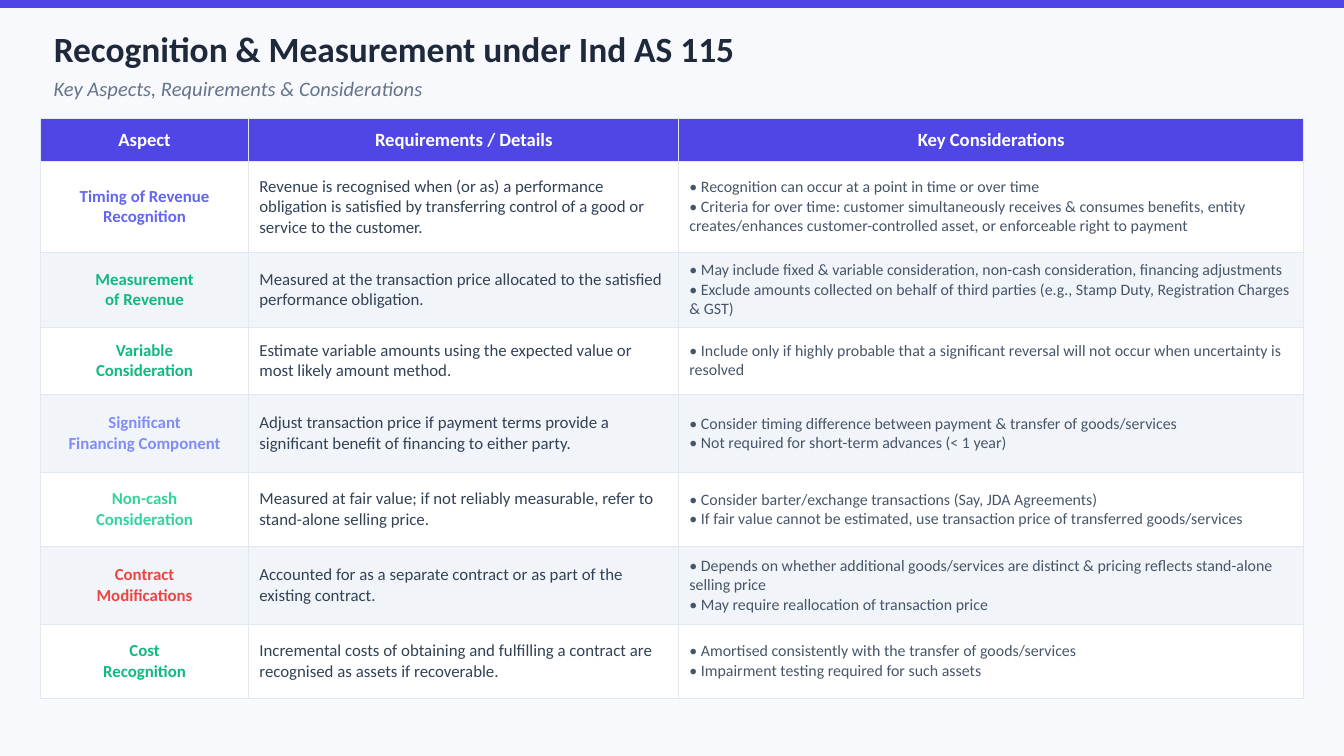
from dataclasses import dataclass

from lxml import etree
from pptx import Presentation
from pptx.dml.color import RGBColor
from pptx.enum.shapes import MSO_SHAPE
from pptx.enum.text import MSO_ANCHOR, MSO_AUTO_SIZE, PP_ALIGN
from pptx.oxml.ns import qn
from pptx.util import Inches, Pt

RECTANGLE = MSO_SHAPE.RECTANGLE
MIDDLE = MSO_ANCHOR.MIDDLE
NO_FIT = MSO_AUTO_SIZE.NONE
LEFT, CENTER = PP_ALIGN.LEFT, PP_ALIGN.CENTER

FONT = "Calibri"
INDIGO = RGBColor(0x4F, 0x46, 0xE5)
VIOLET = RGBColor(0x63, 0x66, 0xF1)
LAVENDER = RGBColor(0x81, 0x8C, 0xF8)
GREEN = RGBColor(0x10, 0xB9, 0x81)
MINT = RGBColor(0x34, 0xD3, 0x99)
RED = RGBColor(0xEF, 0x44, 0x44)
INK = RGBColor(0x1E, 0x29, 0x3B)
BODY = RGBColor(0x33, 0x41, 0x55)
DETAIL = RGBColor(0x47, 0x55, 0x69)
MUTED = RGBColor(0x64, 0x74, 0x8B)
BORDER = RGBColor(0xE2, 0xE8, 0xF0)
PALE = RGBColor(0xF1, 0xF5, 0xF9)
PAGE = RGBColor(0xF8, 0xF9, 0xFC)
WHITE = RGBColor(0xFF, 0xFF, 0xFF)

# The slide is a 16:9 grid, 1000 units wide
UNIT = Inches(0.01)
SLIDE_WIDTH = 1000 * UNIT
SLIDE_HEIGHT = SLIDE_WIDTH * 9 // 16
COLUMNS = (155, 320, 465)
HEADER_HEIGHT = 32
PADDING_X, PADDING_Y = 8, 6


@dataclass(frozen=True)
class Region:
    """A place on the slide, in grid units."""
    left: int
    top: int
    width: int
    height: int

    def emu(self) -> tuple[int, ...]:
        return tuple(n * UNIT for n in (self.left, self.top, self.width, self.height))


@dataclass(frozen=True)
class Aspect:
    name: tuple[str, ...]
    color: RGBColor
    height: int
    requirement: str
    considerations: tuple[str, ...]


HEADINGS = ("Aspect", "Requirements / Details", "Key Considerations")
ASPECTS = (
    Aspect(("Timing of Revenue", "Recognition"), VIOLET, 68,
           "Revenue is recognised when (or as) a performance obligation is satisfied "
           "by transferring control of a good or service to the customer.",
           ("Recognition can occur at a point in time or over time",
            "Criteria for over time: customer simultaneously receives & consumes benefits, "
            "entity creates/enhances customer-controlled asset, or enforceable right to payment")),
    Aspect(("Measurement", "of Revenue"), GREEN, 55,
           "Measured at the transaction price allocated to the satisfied performance obligation.",
           ("May include fixed & variable consideration, non-cash consideration, "
            "financing adjustments",
            "Exclude amounts collected on behalf of third parties "
            "(e.g., Stamp Duty, Registration Charges & GST)")),
    Aspect(("Variable", "Consideration"), GREEN, 50,
           "Estimate variable amounts using the expected value or most likely amount method.",
           ("Include only if highly probable that a significant reversal will not occur "
            "when uncertainty is resolved",)),
    Aspect(("Significant", "Financing Component"), LAVENDER, 58,
           "Adjust transaction price if payment terms provide a significant benefit "
           "of financing to either party.",
           ("Consider timing difference between payment & transfer of goods/services",
            "Not required for short-term advances (< 1 year)")),
    Aspect(("Non-cash", "Consideration"), MINT, 55,
           "Measured at fair value; if not reliably measurable, "
           "refer to stand-alone selling price.",
           ("Consider barter/exchange transactions (Say, JDA Agreements)",
            "If fair value cannot be estimated, use transaction price of "
            "transferred goods/services")),
    Aspect(("Contract", "Modifications"), RED, 58,
           "Accounted for as a separate contract or as part of the existing contract.",
           ("Depends on whether additional goods/services are distinct & pricing reflects "
            "stand-alone selling price",
            "May require reallocation of transaction price")),
    Aspect(("Cost", "Recognition"), GREEN, 55,
           "Incremental costs of obtaining and fulfilling a contract are recognised "
           "as assets if recoverable.",
           ("Amortised consistently with the transfer of goods/services",
            "Impairment testing required for such assets")),
)


def write(frame, *lines: str, size: float, color: RGBColor, bold: bool = False,
          italic: bool = False, align: PP_ALIGN = LEFT) -> None:
    """Write one paragraph per line, all in the same format."""
    for index, line in enumerate(lines):
        para = frame.add_paragraph() if index else frame.paragraphs[0]
        para.alignment = align
        span = para.add_run()
        span.text = line
        span.font.name = FONT
        span.font.size = Pt(size)
        span.font.bold = bold
        span.font.italic = italic
        span.font.color.rgb = color


def place_heading(box, region: Region) -> None:
    """Position a text shape and strip its insets."""
    box.left, box.top, box.width, box.height = region.emu()
    frame = box.text_frame
    frame.word_wrap = True
    frame.auto_size = NO_FIT
    frame.vertical_anchor = MIDDLE
    frame.margin_left = frame.margin_right = frame.margin_top = frame.margin_bottom = 0


def style_cell(cell, fill: RGBColor) -> None:
    """Set padding, borders and fill; borders must precede the fill in the XML."""
    cell.margin_left = cell.margin_right = PADDING_X * UNIT
    cell.margin_top = cell.margin_bottom = PADDING_Y * UNIT
    cell.vertical_anchor = MIDDLE
    properties = cell._tc.get_or_add_tcPr()
    for side in ("a:lnL", "a:lnR", "a:lnT", "a:lnB"):
        line = etree.SubElement(properties, qn(side), w=str(Pt(0.5)))
        solid = etree.SubElement(line, qn("a:solidFill"))
        etree.SubElement(solid, qn("a:srgbClr"), val=str(BORDER))
    cell.fill.solid()
    cell.fill.fore_color.rgb = fill


def draw_table(page, region: Region) -> None:
    table = page.shapes.add_table(len(ASPECTS) + 1, len(COLUMNS), *region.emu()).table
    table.horz_banding = False
    for column, width in zip(table.columns, COLUMNS):
        column.width = width * UNIT

    # Header row
    table.rows[0].height = HEADER_HEIGHT * UNIT
    for cell, heading in zip(table.rows[0].cells, HEADINGS):
        style_cell(cell, INDIGO)
        write(cell.text_frame, heading, size=10, color=WHITE, bold=True, align=CENTER)

    # One row per aspect, alternating fills
    for number, aspect in enumerate(ASPECTS, start=1):
        row = table.rows[number]
        row.height = aspect.height * UNIT
        for cell in row.cells:
            style_cell(cell, WHITE if number % 2 else PALE)
        name, requirement, considerations = (cell.text_frame for cell in row.cells)
        write(name, *aspect.name, size=9, color=aspect.color, bold=True, align=CENTER)
        write(requirement, aspect.requirement, size=9, color=BODY)
        write(considerations, *(f"• {point}" for point in aspect.considerations),
              size=8.5, color=DETAIL)


def main() -> None:
    deck = Presentation()
    deck.slide_width, deck.slide_height = SLIDE_WIDTH, SLIDE_HEIGHT
    page = deck.slides.add_slide(deck.slide_layouts.get_by_name("Title Only"))
    page.background.fill.solid()
    page.background.fill.fore_color.rgb = PAGE

    # Accent bar along the top edge
    bar = page.shapes.add_shape(RECTANGLE, *Region(0, 0, 1000, 6).emu())
    bar.shadow.inherit = False
    bar.fill.solid()
    bar.fill.fore_color.rgb = INDIGO
    bar.line.fill.background()

    # Title and subtitle
    title = page.shapes.title
    place_heading(title, Region(40, 15, 920, 42))
    write(title.text_frame, "Recognition & Measurement under Ind AS 115",
          size=19, color=INK, bold=True)
    subtitle_region = Region(40, 55, 920, 22)
    subtitle = page.shapes.add_textbox(*subtitle_region.emu())
    place_heading(subtitle, subtitle_region)
    write(subtitle.text_frame, "Key Aspects, Requirements & Considerations",
          size=11, color=MUTED, italic=True)

    # Aspects table
    table_height = HEADER_HEIGHT + sum(aspect.height for aspect in ASPECTS)
    draw_table(page, Region(30, 88, sum(COLUMNS), table_height))

    deck.save("out.pptx")


if __name__ == "__main__":
    main()
